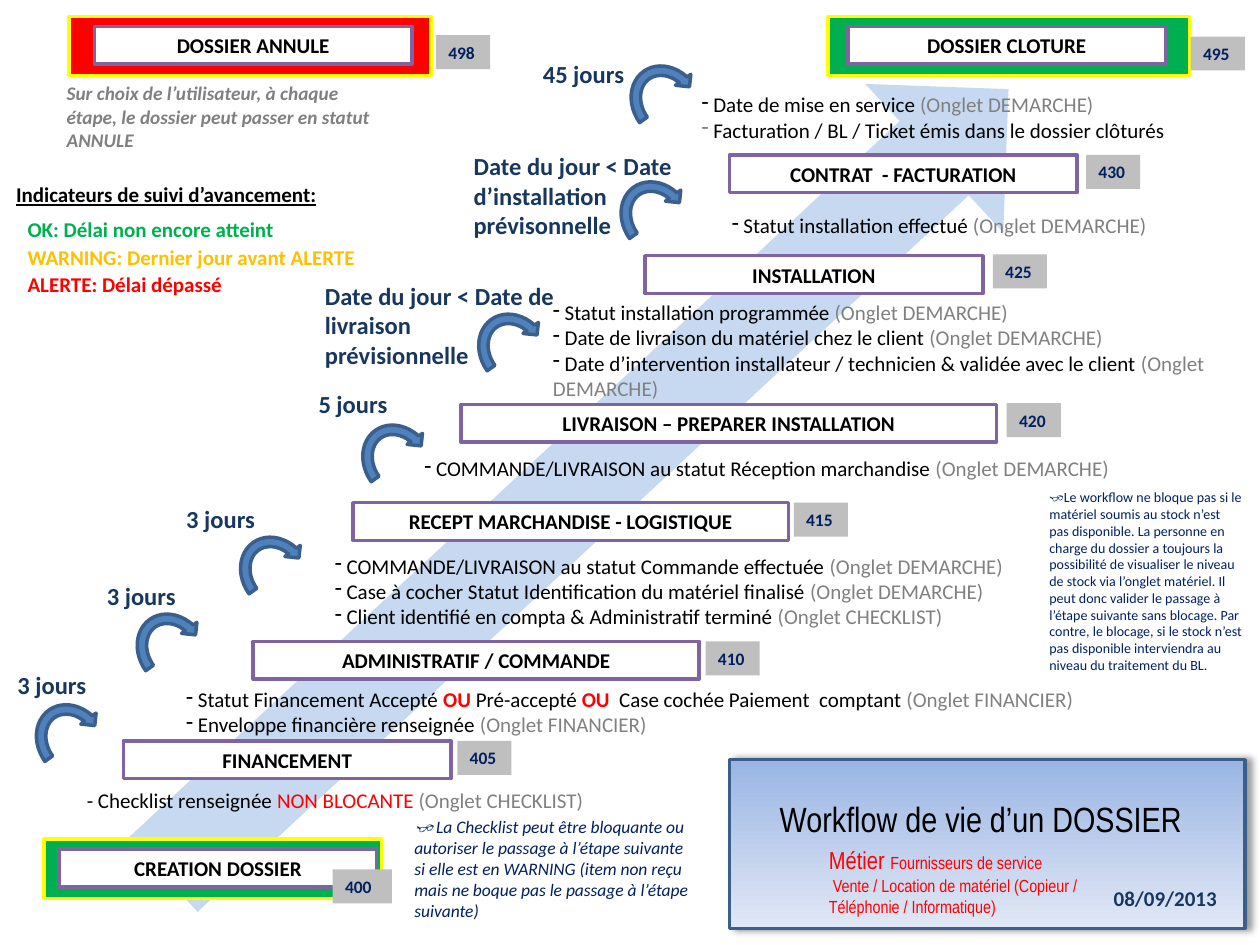
from lxml import etree
from pptx import Presentation
from pptx.dml.color import RGBColor
from pptx.enum.shapes import MSO_SHAPE
from pptx.enum.text import MSO_AUTO_SIZE, PP_ALIGN
from pptx.oxml.ns import qn
from pptx.util import Inches, Pt

RECT = MSO_SHAPE.RECTANGLE
RIGHT_ARROW = MSO_SHAPE.RIGHT_ARROW
CIRCULAR_ARROW = MSO_SHAPE.CIRCULAR_ARROW
CENTER, LEFT = PP_ALIGN.CENTER, PP_ALIGN.LEFT
GROW = MSO_AUTO_SIZE.SHAPE_TO_FIT_TEXT

BLACK = RGBColor(0x00, 0x00, 0x00)
WHITE = RGBColor(0xFF, 0xFF, 0xFF)
RED = RGBColor(0xFF, 0x00, 0x00)
GREEN = RGBColor(0x00, 0xB0, 0x50)
AMBER = RGBColor(0xFF, 0xC0, 0x00)
YELLOW = RGBColor(0xFF, 0xFF, 0x00)
GREY = RGBColor(0x80, 0x80, 0x80)
LIGHT_GREY = RGBColor(0xBF, 0xBF, 0xBF)
PURPLE = RGBColor(0x80, 0x64, 0xA2)
NAVY = RGBColor(0x00, 0x20, 0x60)
DARK_BLUE = RGBColor(0x17, 0x37, 0x5E)
BLUE = RGBColor(0x4F, 0x81, 0xBD)
EDGE_BLUE = RGBColor(0x3A, 0x5F, 0x8C)
PALE_BLUE = RGBColor(0xC6, 0xD9, 0xF1)
GRADIENT_TOP = RGBColor(0x9A, 0xB5, 0xE4)
GRADIENT_BOTTOM = RGBColor(0xE1, 0xE8, 0xF5)

prs = Presentation()
prs.slide_width, prs.slide_height = Inches(10), Inches(7.5)
slide = prs.slides.add_slide(prs.slide_layouts[6])


def add_figure(kind, box, fill, line=None, rotation=0):
    figure = slide.shapes.add_shape(kind, *map(Inches, box))
    figure.shadow.inherit = False
    figure.rotation = rotation
    if fill is not None:
        figure.fill.solid()
        figure.fill.fore_color.rgb = fill
    if line is None:
        figure.line.fill.background()
    else:
        figure.line.color.rgb = line
        figure.line.width = Pt(2)
    return figure


def write(holder, lines, size, color, bold=False, italic=False, underline=False,
          align=LEFT, font="Calibri", bullets=False, wrap=True):
    """Each line is a string or a list of (text, colour[, bold]) runs."""
    frame = holder.text_frame
    frame.word_wrap = wrap
    frame.auto_size = GROW
    for i, line in enumerate(lines):
        para = frame.add_paragraph() if i else frame.paragraphs[0]
        para.alignment = align
        if bullets:
            props = para._p.get_or_add_pPr()
            etree.SubElement(props, qn("a:buFontTx"))
            etree.SubElement(props, qn("a:buChar")).set("char", "-")
        para.font.name, para.font.size = font, Pt(size)
        para.font.color.rgb = color
        para.font.bold, para.font.italic, para.font.underline = bold, italic, underline
        for text, run_color, *run_bold in [(line, color)] if isinstance(line, str) else line:
            run = para.add_run()
            run.text = text
            if run_color != color:
                run.font.color.rgb = run_color
            if run_bold:
                run.font.bold = run_bold[0]


# Rising arrow behind the workflow
add_figure(RIGHT_ARROW, (0.07, 3.02, 9.16, 1.61), PALE_BLUE, rotation=317.1)

# Coloured frames around the start and end statuses
for left, top, width, fill in [(6.57, 0.13, 2.87, GREEN), (0.55, 0.13, 2.87, RED),
                               (0.35, 6.66, 2.68, GREEN)]:
    add_figure(RECT, (left, top, width, 0.47), fill, YELLOW)

# Statuses: left, top, width, label, then left, top, width, number of the code
statuses = [
    (0.47, 6.74, 2.52, "CREATION DOSSIER", 2.64, 6.9, 0.47, "400"),
    (0.98, 5.88, 2.6, "FINANCEMENT", 3.63, 5.88, 0.43, "405"),
    (2.01, 5.09, 3.54, "ADMINISTRATIF / COMMANDE", 5.6, 5.09, 0.43, "410"),
    (2.8, 3.99, 3.46, "RECEPT MARCHANDISE - LOGISTIQUE", 6.3, 3.99, 0.43, "415"),
    (3.66, 3.21, 4.25, "LIVRAISON – PREPARER INSTALLATION", 7.99, 3.2, 0.43, "420"),
    (5.12, 2.03, 2.68, "INSTALLATION", 7.88, 2.02, 0.43, "425"),
    (5.79, 1.23, 2.76, "CONTRAT  - FACTURATION", 8.62, 1.23, 0.43, "430"),
    (6.73, 0.21, 2.52, "DOSSIER CLOTURE", 9.45, 0.29, 0.43, "495"),
    (0.75, 0.21, 2.52, "DOSSIER ANNULE", 3.46, 0.28, 0.43, "498"),
]
for left, top, width, label, code_left, code_top, code_width, code in statuses:
    status = add_figure(RECT, (left, top, width, 0.3), WHITE, PURPLE)
    write(status, [label], 12, BLACK, bold=True, align=CENTER)
    badge = add_figure(RECT, (code_left, code_top, code_width, 0.27), LIGHT_GREY)
    write(badge, [code], 10, NAVY, bold=True)

# Conditions for passing to the next status
DEMARCHE = ("(Onglet DEMARCHE)", GREY)
FINANCIER = ("(Onglet FINANCIER)", GREY)
conditions = [
    ((1.38, 5.4, 8.5, 0.5), [
        [(" Statut Financement Accepté ", BLACK), ("OU", RED, True), (" Pré-accepté ", BLACK),
         ("OU", RED, True), ("  Case cochée Paiement  comptant ", BLACK), FINANCIER],
        [(" Enveloppe financière renseignée ", BLACK), FINANCIER]]),
    ((2.56, 4.34, 7.24, 0.71), [
        [(" COMMANDE/LIVRAISON au statut Commande effectuée ", BLACK), DEMARCHE],
        [(" Case à cocher Statut Identification du matériel finalisé ", BLACK), DEMARCHE],
        [(" Client identifié en compta & Administratif terminé ", BLACK),
         ("(Onglet CHECKLIST)", GREY)]]),
    ((3.27, 3.57, 5.91, 0.5), [
        [(" COMMANDE/LIVRAISON au statut Réception marchandise ", BLACK), DEMARCHE]]),
    ((4.29, 2.33, 5.71, 1.11), [
        [(" Statut installation programmée ", BLACK), DEMARCHE],
        [(" Date de livraison du matériel chez le client ", BLACK), DEMARCHE],
        [(" Date d’intervention installateur / technicien & validée avec le client ", BLACK),
         DEMARCHE]]),
    ((5.71, 1.64, 4.02, 0.3), [[(" Statut installation effectué ", BLACK), DEMARCHE]]),
    ((5.47, 0.68, 4.41, 0.5), [
        [(" Date de mise en service ", BLACK), DEMARCHE],
        [(" ", GREY), ("Facturation / BL / Ticket émis dans le dossier clôturés", BLACK)]]),
]
for box, lines in conditions:
    write(slide.shapes.add_textbox(*map(Inches, box)), lines, 12, BLACK, bullets=True)

checklist = slide.shapes.add_textbox(Inches(0.59), Inches(6.2), Inches(4.72), Inches(0.3))
write(checklist, [[("- Checklist renseignée ", BLACK), ("NON BLOCANTE", RED),
                   (" (Onglet CHECKLIST)", GREY)]], 12, BLACK)

# Delays: arrow position, then text box and wording
delays = [
    (0.27, 5.54, (0.04, 5.27, 0.87, 0.34), "3 jours"),
    (1.07, 4.82, (0.75, 4.56, 0.87, 0.34), "3 jours"),
    (1.89, 4.21, (1.38, 3.95, 0.87, 0.34), "3 jours"),
    (2.86, 3.32, (2.43, 3.04, 0.87, 0.34), "5 jours"),
    (3.78, 2.44, (2.48, 2.18, 2.05, 0.81), "Date du jour < Date de livraison prévisionnelle"),
    (4.91, 1.39, (3.66, 1.15, 2.05, 0.81), "Date du jour < Date d’installation prévisonnelle"),
    (4.99, 0.47, (4.21, 0.42, 1.65, 0.34), "45 jours"),
]
for left, top, box, delay in delays:
    add_figure(CIRCULAR_ARROW, (left, top, 0.6, 0.7), BLUE, EDGE_BLUE, rotation=324.3)
    write(slide.shapes.add_textbox(*map(Inches, box)), [delay], 14, DARK_BLUE, bold=True)

# Progress indicators
heading = slide.shapes.add_textbox(Inches(0.03), Inches(1.39), Inches(3.46), Inches(0.3))
write(heading, ["Indicateurs de suivi d’avancement:"], 12, BLACK, bold=True, underline=True)
indicators = [("OK: Délai non encore atteint", GREEN),
              ("WARNING: Dernier jour avant ALERTE", AMBER),
              ("ALERTE: Délai dépassé", RED)]
for i, (indicator, color) in enumerate(indicators):
    row = slide.shapes.add_textbox(Inches(0.12), Inches(1.67 + 0.22 * i), Inches(2.99), Inches(0.3))
    write(row, [indicator], 12, color, bold=True)

# Side notes
cancel_note = slide.shapes.add_textbox(Inches(0.43), Inches(0.6), Inches(2.75), Inches(0.66))
write(cancel_note, ["Sur choix de l’utilisateur, à chaque étape, le dossier peut passer en statut "
                    "ANNULE"], 11, GREY, bold=True, italic=True)
checklist_note = slide.shapes.add_textbox(Inches(3.19), Inches(6.43), Inches(2.44), Inches(0.94))
write(checklist_note, ["👓 La Checklist peut être bloquante ou autoriser le passage à l’étape suivante "
                       "si elle est en WARNING (item non reçu mais ne boque pas le passage à l’étape "
                       "suivante)"], 10, NAVY, italic=True)
stock_note = slide.shapes.add_textbox(Inches(8.23), Inches(3.83), Inches(1.73), Inches(1.58))
write(stock_note, ["👓Le workflow ne bloque pas si le matériel soumis au stock n’est pas disponible. "
                   "La personne en charge du dossier a toujours la possibilité de visualiser le niveau "
                   "de stock via l’onglet matériel. Il peut donc valider le passage à l’étape suivante "
                   "sans blocage. Par contre, le blocage, si le stock n’est pas disponible "
                   "interviendra au niveau du traitement du BL."], 8, NAVY)

# Title panel with gradient and soft shadow
panel = add_figure(RECT, (5.79, 6.03, 4.09, 1.34), None, EDGE_BLUE)
panel.fill.gradient()
panel.fill.gradient_angle = 270
for stop, color in zip(panel.fill.gradient_stops, (GRADIENT_TOP, GRADIENT_BOTTOM)):
    stop.color.rgb = color
effects = panel._element.spPr.find(qn("a:effectLst"))
shadow = etree.SubElement(effects, qn("a:outerShdw"), blurRad=str(Pt(4)), dist=str(Pt(3)), dir="0")
shadow_color = etree.SubElement(shadow, qn("a:srgbClr"), val="000000")
etree.SubElement(shadow_color, qn("a:alpha"), val="40000")

title = slide.shapes.add_textbox(Inches(6.09), Inches(6.28), Inches(3.56), Inches(0.44))
write(title, ["Workflow de vie d’un DOSSIER"], 20, BLACK, font="Arial Narrow", wrap=False)
trade = slide.shapes.add_textbox(Inches(6.48), Inches(6.66), Inches(2.61), Inches(0.67))
write(trade, [[("Métier ", RED), ("Fournisseurs de service", RED)],
              " Vente / Location de matériel (Copieur / Téléphonie / Informatique)"],
      10, RED, font="Arial Narrow")
trade.text_frame.paragraphs[0].runs[0].font.size = Pt(14)
date = slide.shapes.add_textbox(Inches(8.74), Inches(6.98), Inches(1.08), Inches(0.3))
write(date, ["08/09/2013"], 12, DARK_BLUE, bold=True)

prs.save("out.pptx")
